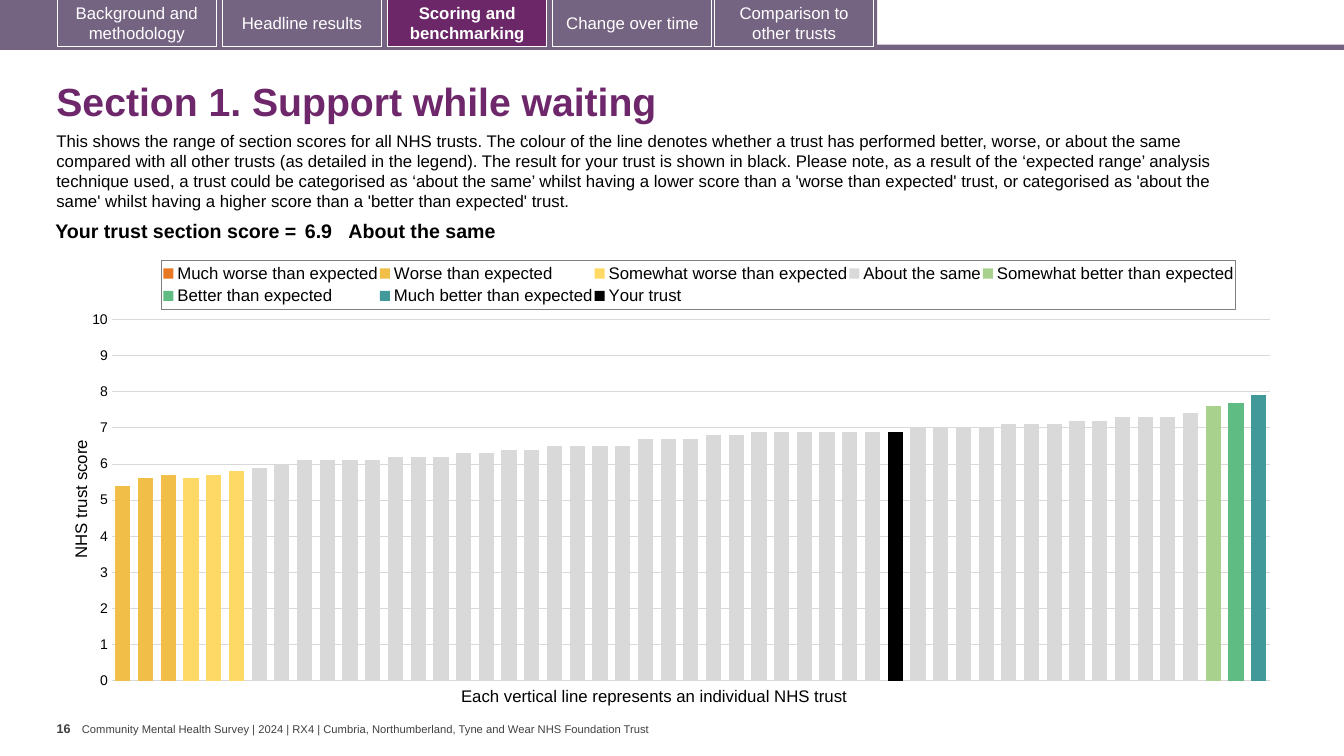
from copy import deepcopy
from lxml import etree
from pptx import Presentation
from pptx.chart.data import CategoryChartData
from pptx.dml.color import RGBColor
from pptx.enum.chart import XL_CHART_TYPE, XL_LEGEND_POSITION, XL_TICK_MARK
from pptx.enum.shapes import MSO_SHAPE
from pptx.enum.text import MSO_ANCHOR, PP_ALIGN
from pptx.oxml import parse_xml
from pptx.oxml.ns import nsdecls, qn
from pptx.util import Pt

RECT = MSO_SHAPE.RECTANGLE
COLUMN = XL_CHART_TYPE.COLUMN_CLUSTERED
TOP_LEGEND = XL_LEGEND_POSITION.TOP
NO_TICK = XL_TICK_MARK.NONE
TOP, MIDDLE = MSO_ANCHOR.TOP, MSO_ANCHOR.MIDDLE
LEFT, CENTER, RIGHT = PP_ALIGN.LEFT, PP_ALIGN.CENTER, PP_ALIGN.RIGHT

WIDTH, HEIGHT = 960, 540
BAR, ACTIVE, TITLE = "756382", "6B2768", "6D276A"
BLACK, WHITE, GREY = "000000", "FFFFFF", "404040"

TABS = [
    (41, "Background and methodology"),
    (159, "Headline results"),
    (277, "Scoring and benchmarking"),
    (395, "Change over time"),
    (510.5, "Comparison to other trusts"),
]
ACTIVE_TAB = "Scoring and benchmarking"

INTRO = (
    "This shows the range of section scores for all NHS trusts. The colour of the line denotes "
    "whether a trust has performed better, worse, or about the same compared with all other trusts "
    "(as detailed in the legend). The result for your trust is shown in black. Please note, as a "
    "result of the ‘expected range’ analysis technique used, a trust could be categorised as "
    "‘about the same’ whilst having a lower score than a 'worse than expected' trust, or "
    "categorised as 'about the same' whilst having a higher score than a 'better than expected' trust."
)

TRUSTS = 51
BANDS = [
    ("Much worse than expected", "E87722", 0, []),
    ("Worse than expected", "F1BE48", 0, [5.4, 5.6, 5.7]),
    ("Somewhat worse than expected", "FFD966", 3, [5.6, 5.7, 5.8]),
    ("About the same", "D9D9D9", 6, [
        5.9, 6, 6.1, 6.1, 6.1, 6.1, 6.2, 6.2, 6.2, 6.3, 6.3, 6.4, 6.4, 6.5,
        6.5, 6.5, 6.5, 6.7, 6.7, 6.7, 6.8, 6.8, 6.9, 6.9, 6.9, 6.9, 6.9, 6.9,
        6.9, 7, 7, 7, 7, 7.1, 7.1, 7.1, 7.2, 7.2, 7.3, 7.3, 7.3, 7.4]),
    ("Somewhat better than expected", "A9D18E", 48, [7.6]),
    ("Better than expected", "5FBD83", 49, [7.7]),
    ("Much better than expected", "419999", 50, [7.9]),
    ("Your trust", BLACK, 34, [6.9]),
]


def rgb(value):
    """Turn a hex string into a colour."""
    return RGBColor.from_string(value)


def style(font, size, color=BLACK, bold=False):
    """Set face, size, colour and weight of a font."""
    font.name, font.size, font.bold = "Arial", Pt(size), bold
    font.color.rgb = rgb(color)


def write(tf, text, size, color=BLACK, bold=False, align=LEFT):
    """Write one styled paragraph and return it."""
    p = tf.paragraphs[0]
    p.text, p.alignment = text, align
    style(p.font, size, color, bold)
    return p


def add_text(s, box, text, size, color=BLACK, bold=False, anchor=TOP, inset=(7.2, 3.6)):
    """Add a wrapped text box and return its paragraph."""
    tf = s.shapes.add_textbox(*map(Pt, box)).text_frame
    tf.word_wrap, tf.vertical_anchor = True, anchor
    tf.margin_left = tf.margin_right = Pt(inset[0])
    tf.margin_top = tf.margin_bottom = Pt(inset[1])
    return write(tf, text, size, color, bold)


def add_rect(s, box, fill, line=None):
    """Add a flat rectangle."""
    sp = s.shapes.add_shape(RECT, *map(Pt, box))
    sp.shadow.inherit = False
    sp.fill.solid()
    sp.fill.fore_color.rgb = rgb(fill)
    if line:
        sp.line.color.rgb = rgb(line)
        sp.line.width = Pt(0.75)
    else:
        sp.line.fill.background()
    return sp


def add_navigation(s, x, y, w, h):
    """Draw the tab strip across the top."""
    add_rect(s, (x, y + h - 3.8, w, 3.8), BAR)
    add_rect(s, (x, y, 626.5, h - 1.5), BAR)
    for left, label in TABS:
        active = label == ACTIVE_TAB
        sp = add_rect(s, (x + left, y - 0.5, 113.6, 33.8), ACTIVE if active else BAR, WHITE)
        tf = sp.text_frame
        tf.word_wrap, tf.vertical_anchor = True, MIDDLE
        write(tf, label, 12, WHITE, active, CENTER)


def add_heading(s, x, y, w, h):
    """Place the title over the introduction."""
    p = add_text(s, (x, y, w, 52), "Section 1. Support while waiting", 28, TITLE, True, MIDDLE)
    p.line_spacing = 0.9
    add_text(s, (x, y + 41.7, w - 26, h - 41.7), INTRO, 12)


def add_score(s, x, y, w, h):
    """Place the trust's own score in a one-row table."""
    table = s.shapes.add_table(1, 3, Pt(x), Pt(y), Pt(w), Pt(h)).table
    table.first_row = table.horz_banding = False
    widths = [189.5, 34, w - 223.5]
    cells = [("Your trust section score =", RIGHT, 2.9), ("6.9", LEFT, 2.9), ("About the same", LEFT, 0)]
    for i, (text, align, inset) in enumerate(cells):
        table.columns[i].width = Pt(widths[i])
        cell = table.cell(0, i)
        cell.fill.background()
        cell.margin_left = cell.margin_right = Pt(inset)
        cell.margin_top = cell.margin_bottom = Pt(2.9)
        write(cell.text_frame, text, 14, BLACK, True, align)


def set_layout(parent, index, inner=False, **place):
    """Give a chart part a fixed place in fractions of the chart."""
    for old in parent.findall(qn("c:layout")):
        parent.remove(old)
    layout = parse_xml(f"<c:layout {nsdecls('c')}><c:manualLayout/></c:layout>")
    manual = layout[0]
    items = [("layoutTarget", "inner")] if inner else []
    items += [(f"{k}Mode", "edge") for k in "xy"] + list(place.items())
    for tag, value in items:
        etree.SubElement(manual, qn(f"c:{tag}")).set("val", str(value))
    parent.insert(index, layout)


def move_last_to_right_axis(area):
    """Move the last series to its own columns on an unlabelled right axis."""
    bars, cat, val = (area.find(qn(f"c:{tag}")) for tag in ("barChart", "catAx", "valAx"))
    bars2, cat2, val2 = map(deepcopy, (bars, cat, val))
    bars.remove(bars.findall(qn("c:ser"))[-1])
    for ser in bars2.findall(qn("c:ser"))[:-1]:
        bars2.remove(ser)
    for tag in ("majorGridlines", "title"):
        val2.remove(val2.find(qn(f"c:{tag}")))
    for node, value in zip(bars2.findall(qn("c:axId")), ("5001", "5002")):
        node.set("val", value)
    for axis, own, other in ((cat2, "5001", "5002"), (val2, "5002", "5001")):
        axis.find(qn("c:axId")).set("val", own)
        axis.find(qn("c:crossAx")).set("val", other)
    for tag, value in (("axPos", "r"), ("majorTickMark", "out"), ("tickLblPos", "none"), ("crosses", "max")):
        val2.find(qn(f"c:{tag}")).set("val", value)
    bars.addnext(bars2)
    val.addnext(val2)
    val2.addnext(cat2)


def add_score_chart(s, x, y, w, h):
    """Draw one column per trust, coloured by band."""
    data = CategoryChartData()
    data.categories = [str(n + 1) for n in range(TRUSTS)]
    for name, _, start, scores in BANDS:
        data.add_series(name, [None] * start + scores + [None] * (TRUSTS - start - len(scores)))
    chart = s.shapes.add_chart(COLUMN, Pt(x), Pt(y), Pt(w), Pt(h), data).chart
    style(chart.font, 10)
    chart.has_title = False
    plot = chart.plots[0]
    plot.gap_width, plot.overlap, plot.vary_by_categories = 50, 100, False
    for series, (_, color, _, _) in zip(plot.series, BANDS):
        series.format.fill.solid()
        series.format.fill.fore_color.rgb = rgb(color)
    chart.category_axis.visible = False
    axis = chart.value_axis
    axis.minimum_scale, axis.maximum_scale, axis.major_unit = 0, 10, 1
    axis.major_tick_mark = axis.minor_tick_mark = NO_TICK
    axis.format.line.fill.background()
    grid = axis.major_gridlines.format.line
    grid.color.rgb, grid.width = rgb("D9D9D9"), Pt(0.75)
    style(axis.tick_labels.font, 10)
    write(axis.axis_title.text_frame, "NHS trust score", 12, align=CENTER)
    set_layout(axis.axis_title._element, 1, x=0, y=0.42)
    chart.has_legend = True
    legend = chart.legend
    legend.position, legend.include_in_layout = TOP_LEGEND, False
    style(legend.font, 12)
    border = parse_xml(
        f'<c:spPr {nsdecls("c", "a")}><a:ln w="9525"><a:solidFill>'
        '<a:srgbClr val="7F7F7F"/></a:solidFill></a:ln></c:spPr>')
    legend._element.find(qn("c:txPr")).addprevious(border)
    set_layout(legend._element, 1, x=0.077, y=0.025, w=0.877, h=0.11)
    area = chart._chartSpace.chart.plotArea
    move_last_to_right_axis(area)
    set_layout(area, 0, True, x=0.036, y=0.158, w=0.946, h=0.807)
    add_text(s, (x + 274, y + 308.5, 320, 21.6), "Each vertical line represents an individual NHS trust", 12)


def add_footer(s, x, y, w, h):
    """Place the page number and the survey name."""
    add_text(s, (x, y, 18, h), "16", 9, GREY, True, inset=(0, 3.6))
    footer = "Community Mental Health Survey | 2024 | RX4 | Cumbria, Northumberland, Tyne and Wear NHS Foundation Trust"
    add_text(s, (x + 18, y + 4.6, w - 18, 9.4), footer, 8, GREY, anchor=MIDDLE, inset=(0, 0))


def main():
    """Build the slide and save it."""
    prs = Presentation()
    prs.slide_width, prs.slide_height = Pt(WIDTH), Pt(HEIGHT)
    s = prs.slides.add_slide(prs.slide_layouts[6])
    add_navigation(s, 0, 0, WIDTH, 35.7)
    add_heading(s, 33.2, 48, 899, 107.5)
    add_score_chart(s, 48.2, 177.8, 874.8, 319.7)
    add_score(s, 25.4, 154.8, 842.4, 22.3)
    add_footer(s, 40.5, 511.5, 460, 28.5)
    prs.save("out.pptx")


if __name__ == "__main__":
    main()
